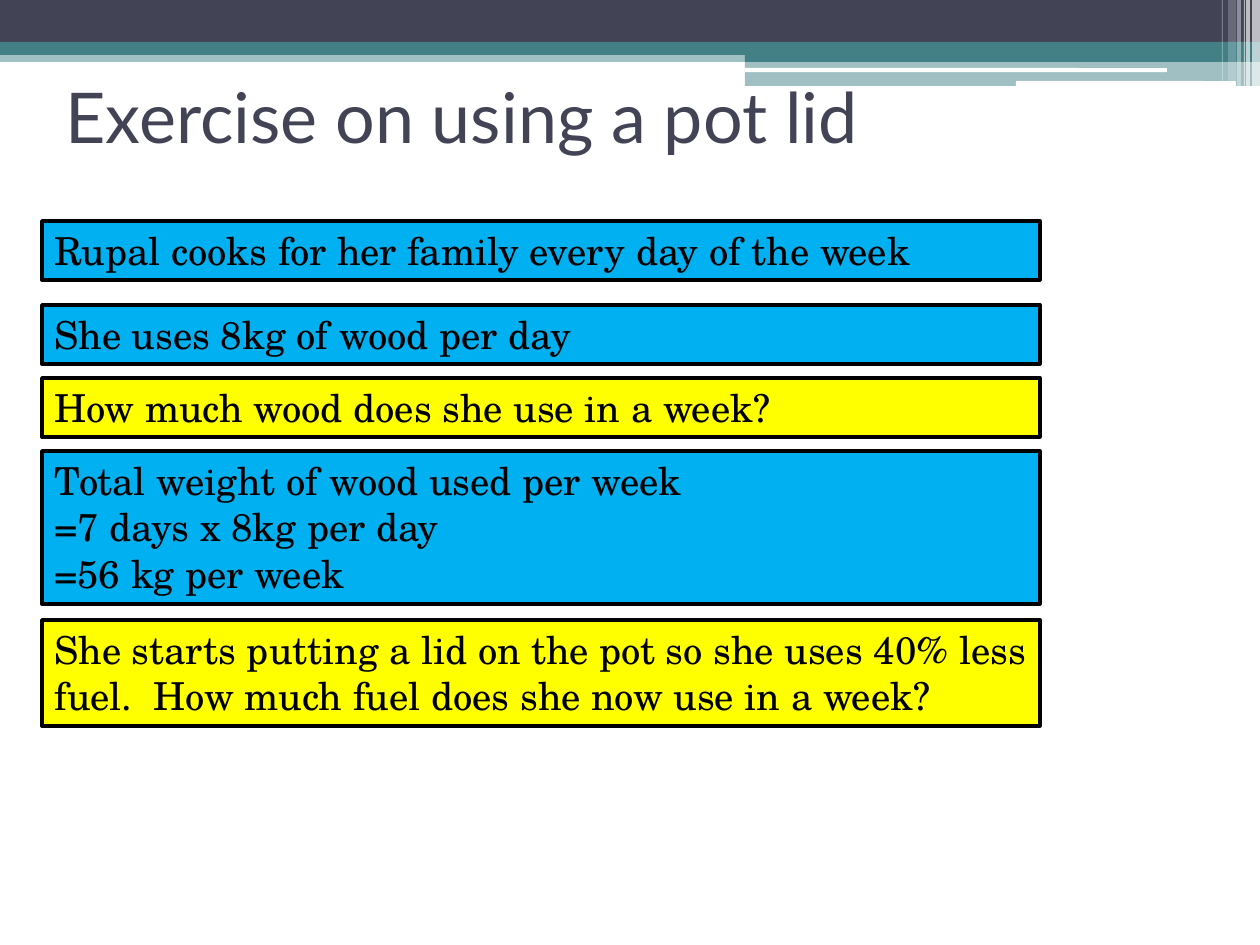
from lxml import etree
from pptx import Presentation, util as u
from pptx.dml.color import RGBColor
from pptx.enum import shapes, text
from pptx.oxml.ns import qn

SCALE = 914400 / 126  # EMU in one px
WIDE, HIGH = 1260, 945

INK = RGBColor(0x42, 0x44, 0x56)
TEAL = RGBColor(0x43, 0x80, 0x86)
WHITE = RGBColor(0xFF, 0xFF, 0xFF)
BLACK = RGBColor(0x00, 0x00, 0x00)
BLUE = RGBColor(0x00, 0xB0, 0xF0)
YELLOW = RGBColor(0xFF, 0xFF, 0x00)

RECT = shapes.MSO_SHAPE.RECTANGLE
ROUND = shapes.MSO_SHAPE.ROUNDED_RECTANGLE
TITLE = {"name": "Lato", "size": u.Pt(40), "bold": False}
BODY = {"name": "TeX Gyre Schola", "size": u.Pt(22)}

# Bands: left, top, width, height, colour, opacity in percent
BANDS = [
    (0, 50, WIDE, 12, TEAL, 50),
    (0, 0, WIDE, 43, INK, 100),
    (0, 42, WIDE, 13, TEAL, 100),
    (745, 49, 515, 13, TEAL, 100),
    (745, 61, 515, 25, TEAL, 50),
]
# Rounded white bars: left, top, width, height
BARS = [(745, 68, 422, 4), (1016, 81, 220, 5)]
# White stripes: left, width, height, opacity in percent
STRIPES = [
    (1252, 8, 86, 65),
    (1246, 4, 86, 65),
    (1244, 1, 86, 60),
    (1237, 4, 86, 40),
    (1228, 8, 81, 20),
    (1222, 1, 81, 30),
]
# Steps: top, height, colour, lines
STEPS = [
    (221, 59, BLUE, ["Rupal cooks for her family every day of the week"]),
    (305, 59, BLUE, ["She uses 8kg of wood per day"]),
    (378, 59, YELLOW, ["How much wood does she use in a week?"]),
    (451, 153, BLUE, ["Total weight of wood used per week",
                      "=7 days x 8kg per day", "=56 kg per week"]),
    (620, 106, YELLOW, ["She starts putting a lid on the pot so she uses 40% less "
                        "fuel.  How much fuel does she now use in a week?"]),
]


def px(n):
    return u.Emu(round(n * SCALE))


def style(font, form, color):
    for key, val in form.items():
        setattr(font, key, val)
    font.color.rgb = color


def add_box(slide, box, color, alpha=100, kind=RECT):
    shape = slide.shapes.add_shape(kind, *map(px, box))
    shape.shadow.inherit = False
    shape.fill.solid()
    shape.fill.fore_color.rgb = color
    shape.line.fill.background()
    if alpha < 100:
        tint = shape.fill._xPr.find(".//" + qn("a:srgbClr"))
        etree.SubElement(tint, qn("a:alpha"), val=str(alpha * 1000))
    return shape


def add_step(slide, top, high, color, lines):
    shape = add_box(slide, (42, top, 998, high), color)
    shape.line.color.rgb = BLACK
    shape.line.width = u.Pt(2)
    frame = shape.text_frame
    frame.word_wrap = True
    frame.auto_size = text.MSO_AUTO_SIZE.SHAPE_TO_FIT_TEXT
    frame.vertical_anchor = text.MSO_ANCHOR.TOP
    frame.text = "\n".join(lines)
    for para in frame.paragraphs:
        para.alignment = text.PP_ALIGN.LEFT
        style(para.runs[0].font, BODY, BLACK)


def set_title(slide, words):
    title = slide.shapes.title
    title.left, title.top, title.width, title.height = map(px, (53, 42, 1134, 147))
    frame = title.text_frame
    frame.text = words
    frame.auto_size = text.MSO_AUTO_SIZE.NONE
    frame.vertical_anchor = text.MSO_ANCHOR.MIDDLE
    para = frame.paragraphs[0]
    para.alignment = text.PP_ALIGN.LEFT
    style(para.runs[0].font, TITLE, INK)
    # Bring the title in front of the bands
    title.element.getparent().append(title.element)


def main():
    deck = Presentation()
    deck.slide_width, deck.slide_height = px(WIDE), px(HIGH)
    slide = deck.slides.add_slide(deck.slide_layouts[5])

    # Header
    for *box, color, alpha in BANDS:
        add_box(slide, box, color, alpha)
    for box in BARS:
        add_box(slide, box, WHITE, kind=ROUND)
    for left, wide, high, alpha in STRIPES:
        add_box(slide, (left, 0, wide, high), WHITE, alpha)

    # Title and exercise
    set_title(slide, "Exercise on using a pot lid")
    for step in STEPS:
        add_step(slide, *step)

    deck.save("out.pptx")


if __name__ == "__main__":
    main()
